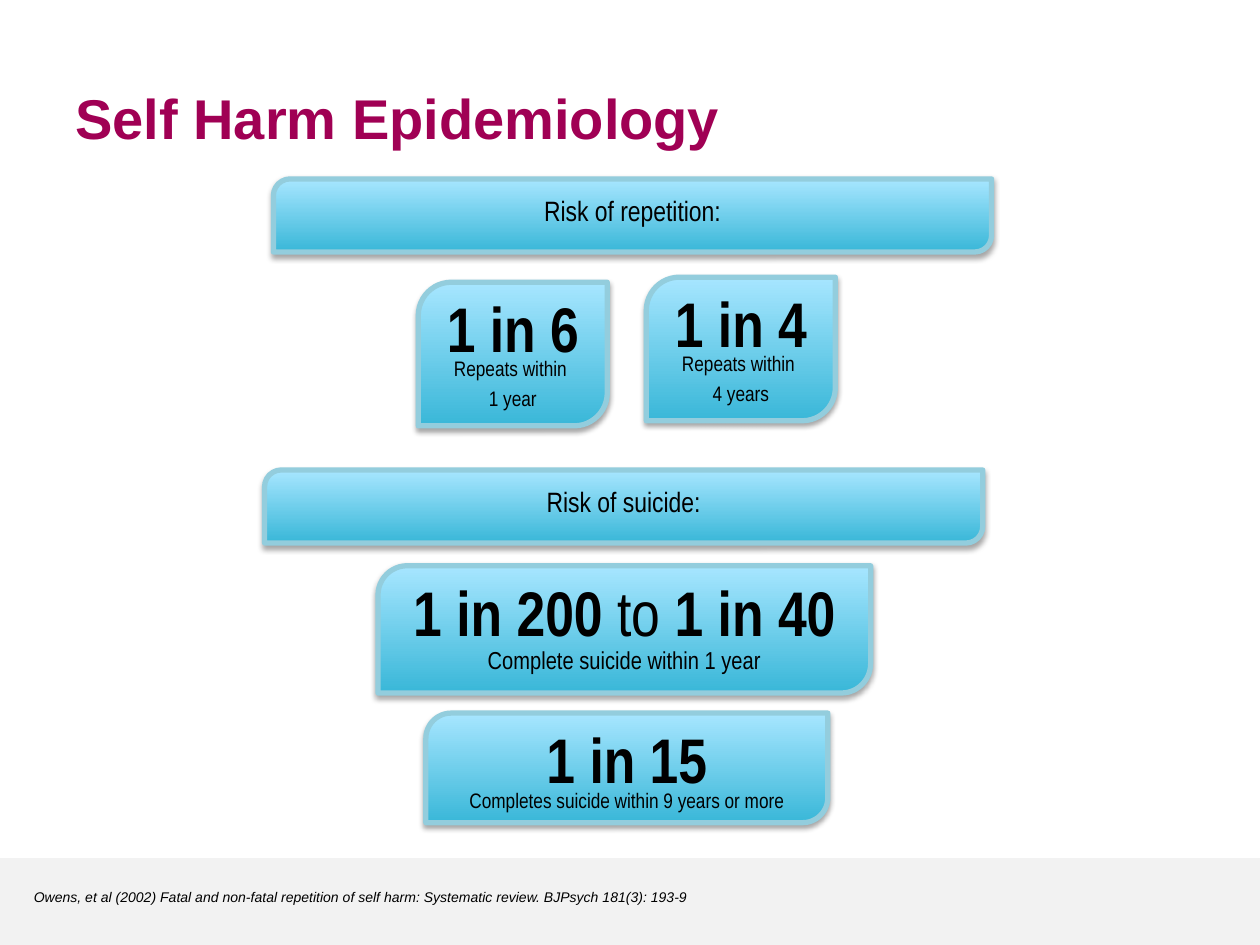
from lxml import etree
from pptx import Presentation
from pptx.dml.color import RGBColor
from pptx.enum.shapes import MSO_SHAPE as Shape
from pptx.enum.text import MSO_ANCHOR as Anchor, PP_ALIGN as Align
from pptx.oxml.ns import qn
from pptx.util import Inches, Pt

COLORS = {
    "title": "A00054",
    "text": "000000",
    "footer": "F2F2F2",
    "card_bottom": "39B7D8",
    "card_top": "A7E6FF",
    "card_line": "93CDDD",
    "shadow": "000000",
}
HEADING = {"name": "Arial", "size": Pt(32), "bold": True}
CITATION = {"name": "Arial", "size": Pt(8), "italic": True}
NARROW = {"name": "Arial Narrow"}
FIGURE = {**NARROW, "size": Pt(36), "bold": True}
BANNER_SIZE = (5.7, 0.58)
TILE_SIZE = (1.5, 1.14)


def color(key):
    return RGBColor.from_string(COLORS[key])


def add_text(shapes, box, paragraphs, font, align=Align.LEFT,
             anchor=Anchor.TOP, color_key="text"):
    """Each paragraph is a list of (text, font changes) runs."""
    shape = shapes.add_textbox(*map(Inches, box))
    frame = shape.text_frame
    frame.word_wrap = True
    frame.vertical_anchor = anchor
    for index, runs in enumerate(paragraphs):
        paragraph = frame.add_paragraph() if index else frame.paragraphs[0]
        paragraph.alignment = align
        if index:
            paragraph.space_before = Pt(2.8)
        for text, changes in runs:
            run = paragraph.add_run()
            run.text = text
            run.font.color.rgb = color(color_key)
            for name, value in {**font, **changes}.items():
                setattr(run.font, name, value)


def add_shadow(shape):
    shape.shadow.inherit = False
    effects = shape._element.spPr.find(qn("a:effectLst"))
    shadow = etree.SubElement(
        effects, qn("a:outerShdw"), blurRad=str(Pt(3.1)), dist=str(Pt(1.8)),
        dir="5400000", algn="t", rotWithShape="0")
    shade = etree.SubElement(shadow, qn("a:srgbClr"), val=COLORS["shadow"])
    etree.SubElement(shade, qn("a:alpha"), val="35000")


def add_card(shapes, box):
    card = shapes.add_shape(Shape.ROUND_2_DIAG_RECTANGLE, *map(Inches, box))
    card.adjustments[0] = 0.23
    card.adjustments[1] = 0
    card.fill.gradient()
    card.fill.gradient_angle = 90
    for stop, key in zip(card.fill.gradient_stops, ("card_bottom", "card_top")):
        stop.color.rgb = color(key)
    card.line.color.rgb = color("card_line")
    card.line.width = Pt(3)
    add_shadow(card)


def add_banner(slide, left, top, label):
    shapes = slide.shapes.add_group_shape().shapes
    width, height = BANNER_SIZE
    add_card(shapes, (left, top, width, height))
    add_text(shapes, (left, top + 0.07, width, 0.38), [[(label, {})]],
             {**NARROW, "size": Pt(16)}, Align.CENTER)


def add_statistic(slide, box, figure_runs, caption, caption_size, caption_offset):
    shapes = slide.shapes.add_group_shape().shapes
    left, top, width, _ = box
    add_card(shapes, box)
    add_text(shapes, (left, top + caption_offset, width, 0.33),
             [[(line, {})] for line in caption],
             {**NARROW, "size": Pt(caption_size)}, Align.CENTER)
    add_text(shapes, (left, top + 0.01, width, 0.73), [figure_runs],
             FIGURE, Align.CENTER)


def add_footer(slide):
    band = slide.shapes.add_shape(
        Shape.RECTANGLE, *map(Inches, (0, 6.81, 10, 0.69)))
    band.shadow.inherit = False
    band.fill.solid()
    band.fill.fore_color.rgb = color("footer")
    band.line.fill.background()
    citation = ("Owens, et al (2002) Fatal and non-fatal repetition of self harm: "
                "Systematic review. BJPsych 181(3): 193-9")
    add_text(slide.shapes, (0.17, 7, 8.36, 0.24), [[(citation, {})]], CITATION)


def main():
    presentation = Presentation()
    presentation.slide_width = Inches(10)
    presentation.slide_height = Inches(7.5)
    slide = presentation.slides.add_slide(presentation.slide_layouts[6])

    # Footer and title
    add_footer(slide)
    add_text(slide.shapes, (0.5, 0.56, 8.5, 0.74),
             [[("Self Harm Epidemiology", {})]], HEADING,
             anchor=Anchor.MIDDLE, color_key="title")

    # Risk of repetition
    add_banner(slide, 2.17, 1.42, "Risk of repetition:")
    for left, top, figure, period in ((3.32, 2.24, "1 in 6", "1 year"),
                                      (5.13, 2.2, "1 in 4", "4 years")):
        add_statistic(slide, (left, top, *TILE_SIZE), [(figure, {})],
                      ["Repeats within ", period], 12, 0.53)

    # Risk of suicide
    add_banner(slide, 2.1, 3.73, "Risk of suicide:")
    add_statistic(slide, (3, 4.49, 3.91, 1.01),
                  [("1 in 200 ", {}), ("to", {"bold": False}), (" 1 in 40", {})],
                  ["Complete suicide within 1 year"], 14, 0.58)
    add_statistic(slide, (3.38, 5.66, 3.19, 0.87), [("1 in 15", {})],
                  ["Completes suicide within 9 years or more"], 12, 0.54)

    presentation.save("out.pptx")


if __name__ == "__main__":
    main()
